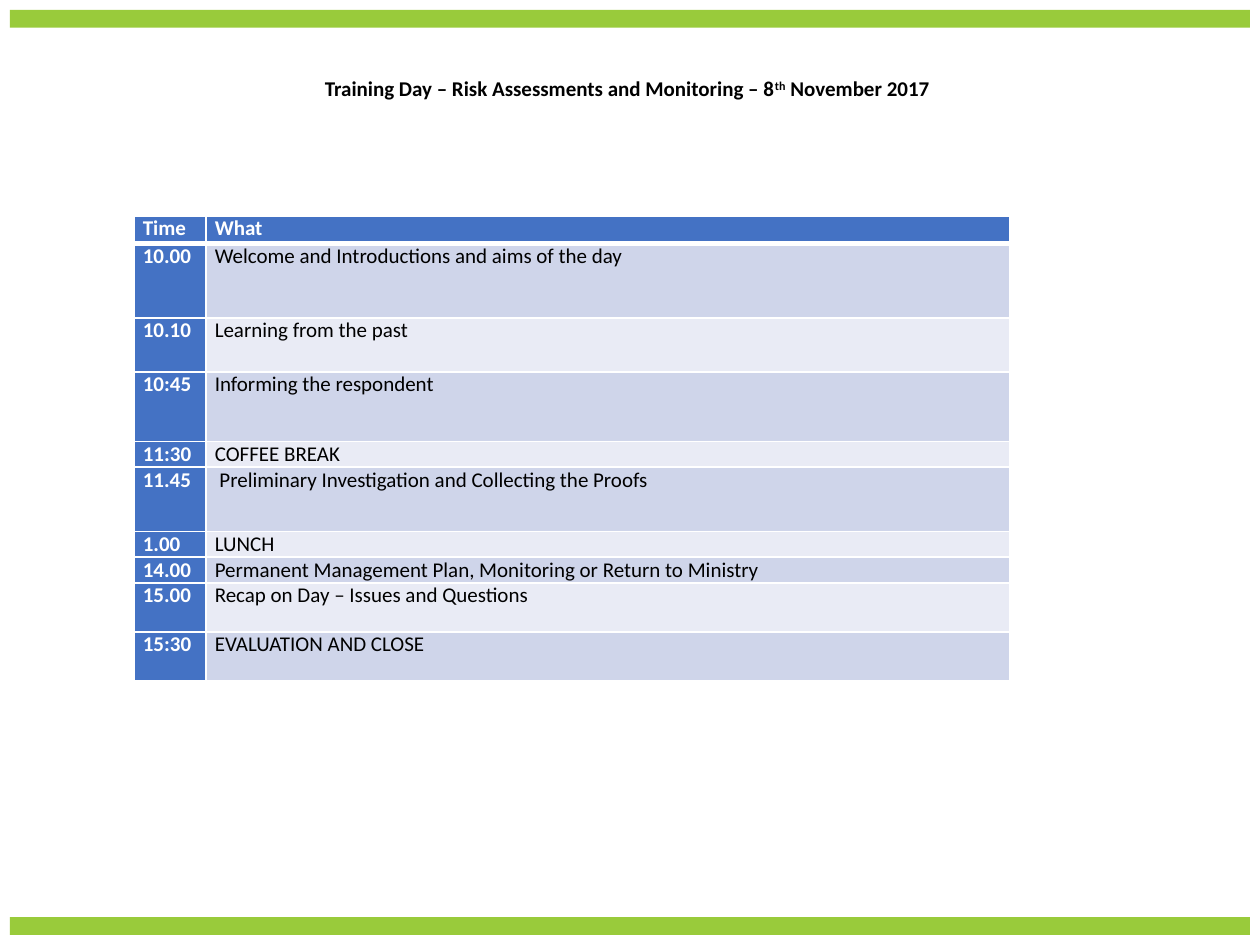
from lxml import etree
from pptx import Presentation
from pptx import util as u
from pptx.dml.color import RGBColor
from pptx.enum import shapes, text
from pptx.oxml.ns import qn

GREEN = RGBColor(0x99, 0xCB, 0x3B)
BLUE = RGBColor(0x44, 0x72, 0xC4)
BAND_DARK = RGBColor(0xCF, 0xD5, 0xEA)
BAND_LIGHT = RGBColor(0xE9, 0xEB, 0xF5)
WHITE = RGBColor(0xFF, 0xFF, 0xFF)
BLACK = RGBColor(0, 0, 0)

# time, session, row height in cm
AGENDA = [
    ("Time", "What", 0.56),
    ("10.00", "Welcome and Introductions and aims of the day", 1.5),
    ("10.10", "Learning from the past", 1.09),
    ("10:45", "Informing the respondent", 1.4),
    ("11:30", "COFFEE BREAK", 0.51),
    ("11.45", " Preliminary Investigation and Collecting the Proofs", 1.3),
    ("1.00", "LUNCH", 0.51),
    ("14.00", "Permanent Management Plan, Monitoring or Return to Ministry", 0.51),
    ("15.00", "Recap on Day – Issues and Questions", 0.99),
    ("15:30", "EVALUATION AND CLOSE", 0.99),
]


def add_run(paragraph, words, color, bold):
    run = paragraph.add_run()
    run.text = words
    run.font.name = "Calibri"
    run.font.size = u.Pt(12)
    run.font.bold = bold
    run.font.color.rgb = color
    return run


def set_borders(cell, widths):
    """Draw white borders; widths maps side letters L, R, T, B to points."""
    properties = cell._tc.get_or_add_tcPr()
    for position, (side, points) in enumerate(widths.items()):
        line = etree.Element(qn(f"a:ln{side}"), w=str(u.Pt(points)))
        fill = etree.SubElement(line, qn("a:solidFill"))
        etree.SubElement(fill, qn("a:srgbClr"), val=str(WHITE))
        properties.insert(position, line)


prs = Presentation()
prs.slide_width, prs.slide_height = u.Cm(25.4), u.Cm(19.05)
slide = prs.slides.add_slide(prs.slide_layouts[6])

for top in (0.2, 18.49):
    band = slide.shapes.add_shape(
        shapes.MSO_SHAPE.RECTANGLE, u.Cm(0.2), u.Cm(top), u.Cm(25), u.Cm(0.36))
    band.shadow.inherit = False
    band.fill.solid()
    band.fill.fore_color.rgb = GREEN
    band.line.fill.background()

heights = [height for _, _, height in AGENDA]
agenda = slide.shapes.add_table(
    len(AGENDA), 2, u.Cm(2.7), u.Cm(4.35), u.Cm(17.65), u.Cm(sum(heights))).table
agenda.columns[0].width = u.Cm(1.45)
agenda.columns[1].width = u.Cm(16.2)

for row, (time, session, height) in enumerate(AGENDA):
    agenda.rows[row].height = u.Cm(height)
    for column, words in enumerate((time, session)):
        cell = agenda.cell(row, column)
        cell.margin_left = cell.margin_right = u.Cm(0.18)
        cell.margin_top = cell.margin_bottom = 0
        heading = row == 0 or column == 0
        cell.fill.solid()
        cell.fill.fore_color.rgb = (
            BLUE if heading else BAND_DARK if row % 2 else BAND_LIGHT)
        add_run(cell.text_frame.paragraphs[0], words,
                WHITE if heading else BLACK, heading)
        set_borders(cell, {"L": 1, "R": 1, "T": 3 if row == 1 else 1,
                           "B": 3 if row == 0 else 1})

title = slide.shapes.add_textbox(
    u.Cm(6.3), u.Cm(1.4), u.Cm(13.4), u.Cm(1.55)).text_frame
title.word_wrap = True
title.vertical_anchor = text.MSO_ANCHOR.TOP
heading_line = title.paragraphs[0]
add_run(heading_line, "Training Day – Risk Assessments and Monitoring – 8", BLACK, True)
ordinal = add_run(heading_line, "th", BLACK, True)
ordinal.font._element.set("baseline", "30000")
add_run(heading_line, " November 2017", BLACK, True)

prs.save("out.pptx")
